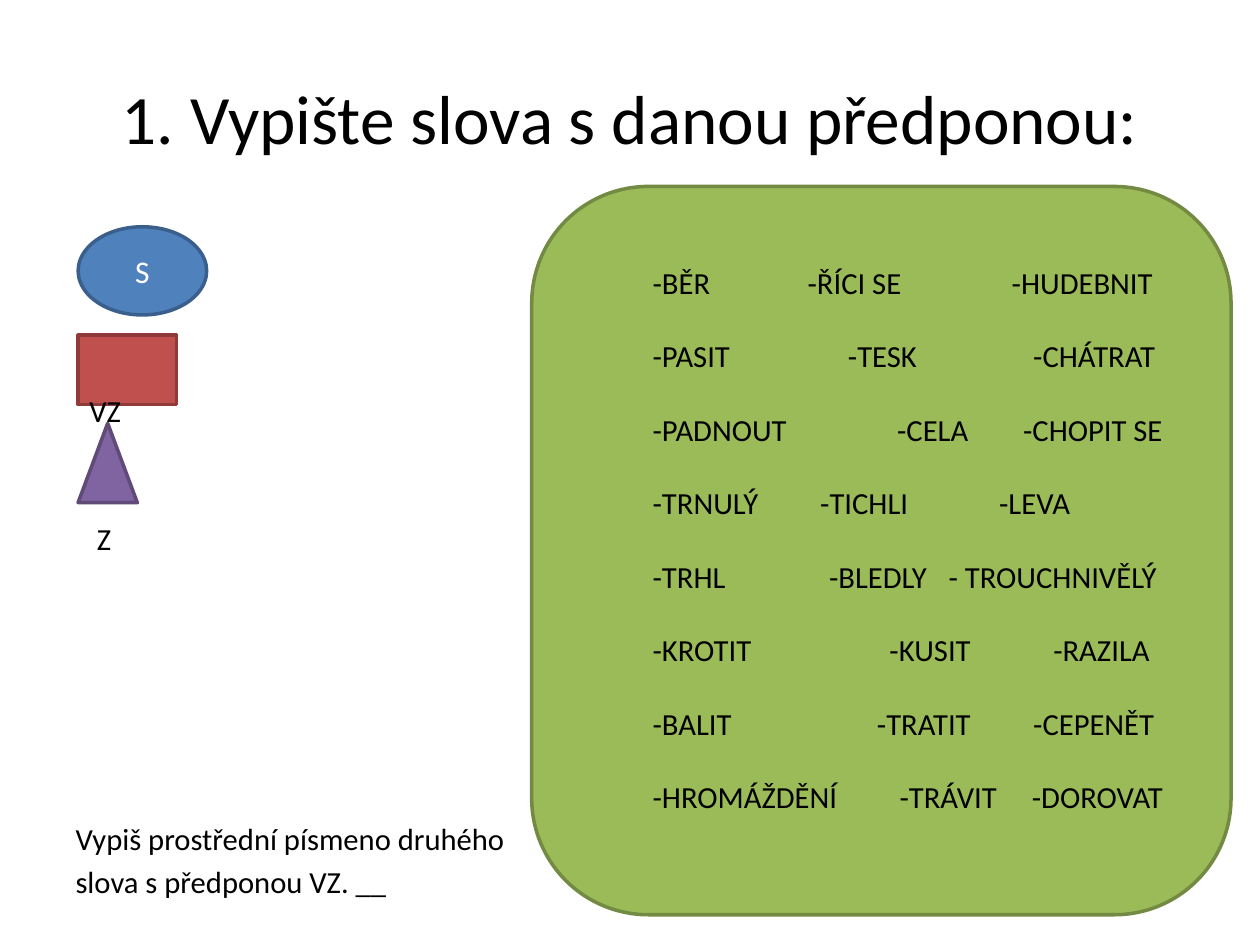
from collections import namedtuple
from dataclasses import dataclass
from lxml.etree import SubElement
from pptx import Presentation
from pptx.dml.color import RGBColor
from pptx.enum.shapes import MSO_SHAPE
from pptx.enum.text import MSO_ANCHOR, PP_ALIGN
from pptx.oxml.ns import qn
from pptx.util import Inches, Pt

COLS, ROWS = 100, 75
CELL = Inches(10) // COLS


@dataclass(frozen=True)
class Theme:
    """Colours and type sizes of the slide."""
    font: str = "Calibri"
    ink: str = "000000"
    pale: str = "FFFFFF"
    blue: tuple = ("4F81BD", "3A5F8C")
    red: tuple = ("C0504D", "8E3B39")
    plum: tuple = ("8064A2", "5F4A78")
    green: tuple = ("9BBB59", "738A42")
    title: float = 39.6
    badge: float = 18
    body: float = 17.5
    lead: float = 42
    gap: float = 3.5
    edge: float = 2


THEME = Theme()
WORDS = [
    ("-BĚR", 12.3, "-ŘÍCI SE", 28.5, "-HUDEBNIT"),
    ("-PASIT", 15.5, "-TESK", 30.2, "-CHÁTRAT"),
    ("-PADNOUT", 19.4, "-CELA", 29.4, "-CHOPIT SE"),
    ("-TRNULÝ", 13.3, "-TICHLI", 27.5, "-LEVA"),
    ("-TRHL", 14, "-BLEDLY", 23.5, "- TROUCHNIVĚLÝ"),
    ("-KROTIT", 18.8, "-KUSIT", 31.8, "-RAZILA"),
    ("-BALIT", 17.8, "-TRATIT", 30.2, "-CEPENĚT"),
    ("-HROMÁŽDĚNÍ", 19.6, "-TRÁVIT", 30.1, "-DOROVAT"),
]


class Box(namedtuple("Box", "x y w h")):
    """A region measured in grid cells."""

    def inner(self, x, y, w, h):
        """Return a box offset from this one."""
        return Box(self.x + x, self.y + y, w, h)

    def emu(self):
        """Return the box as lengths for the slide."""
        return [round(n * CELL) for n in self]


def shape(slide, kind, box, tone):
    """Draw a filled and outlined preset shape."""
    item = slide.shapes.add_shape(kind, *box.emu())
    item.shadow.inherit = False
    item.fill.solid()
    item.fill.fore_color.rgb = RGBColor.from_string(tone[0])
    item.line.color.rgb = RGBColor.from_string(tone[1])
    item.line.width = Pt(THEME.edge)
    return item


def write(frame, text, size, ink=THEME.ink, align=PP_ALIGN.LEFT, wrap=True):
    """Set and format the text of a frame without insets."""
    frame.text = text
    frame.word_wrap = wrap
    frame.margin_left = frame.margin_right = 0
    frame.margin_top = frame.margin_bottom = 0
    for para in frame.paragraphs:
        para.alignment = align
        for run in para.runs:
            run.font.name = THEME.font
            run.font.size = Pt(size)
            run.font.color.rgb = RGBColor.from_string(ink)


def label(slide, box, text, size=THEME.body, **style):
    """Add a text box and return its frame."""
    frame = slide.shapes.add_textbox(*box.emu()).text_frame
    write(frame, text, size, **style)
    return frame


def title(slide, box):
    """Place the centred heading."""
    frame = label(slide, box, "1. Vypište slova s danou předponou:",
                  THEME.title, align=PP_ALIGN.CENTER)
    frame.vertical_anchor = MSO_ANCHOR.MIDDLE


def signs(slide, box):
    """Place the three prefix shapes with their letters."""
    shape(slide, MSO_SHAPE.ISOSCELES_TRIANGLE, box.inner(0, 15.6, 4.7, 6.3), THEME.plum)
    shape(slide, MSO_SHAPE.RECTANGLE, box.inner(0, 8.6, 7.8, 5.5), THEME.red)
    oval = shape(slide, MSO_SHAPE.OVAL, box.inner(0, 0, 10.2, 7), THEME.blue)
    write(oval.text_frame, "S", THEME.badge, THEME.pale, PP_ALIGN.CENTER)
    oval.text_frame.vertical_anchor = MSO_ANCHOR.MIDDLE
    label(slide, box.inner(0.9, 13.1, 5, 3), "VZ")
    label(slide, box.inner(1.5, 23.3, 5, 3), "Z")


def task(slide, box):
    """Place the question under the shapes."""
    text = "Vypiš prostřední písmeno druhého\nslova s předponou VZ. __"
    frame = label(slide, box, text, wrap=False)
    frame.paragraphs[1].space_before = Pt(THEME.gap)


def stops(para, marks):
    """Set the tab stops of a paragraph."""
    tabs = SubElement(para._p.get_or_add_pPr(), qn("a:tabLst"))
    for mark in marks:
        SubElement(tabs, qn("a:tab"), pos=str(round(mark * CELL)), algn="l")


def words(slide, box):
    """Place the green panel and its rows of words."""
    shape(slide, MSO_SHAPE.ROUNDED_RECTANGLE, box, THEME.green)
    rows = "\n".join("\t".join(row[::2]) for row in WORDS)
    frame = label(slide, box.inner(9.6, 3.2, 43, 51), rows)
    for para, row in zip(frame.paragraphs, WORDS):
        para.line_spacing = Pt(THEME.lead)
        stops(para, row[1::2])


def main():
    """Build and save the slide."""
    deck = Presentation()
    deck.slide_width, deck.slide_height = COLS * CELL, ROWS * CELL
    slide = deck.slides.add_slide(deck.slide_layouts[6])
    title(slide, Box(5, 3, 90, 12.5))
    signs(slide, Box(6.2, 18, 10.2, 27))
    words(slide, Box(42.2, 14.8, 55.5, 57.8))
    task(slide, Box(6, 65.1, 36, 7))
    deck.save("out.pptx")


if __name__ == "__main__":
    main()
